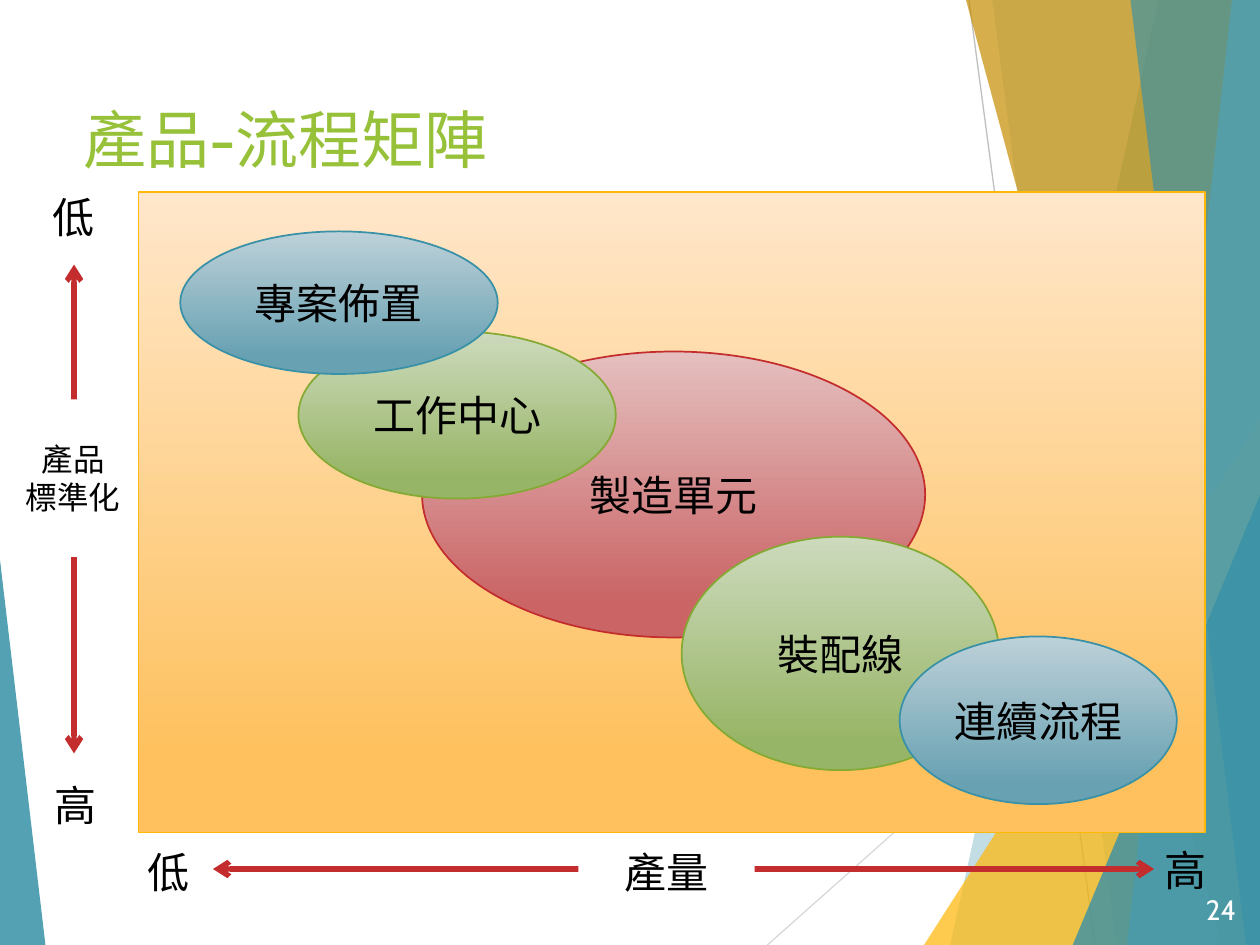
from typing import NamedTuple, Optional

from lxml.etree import SubElement
from pptx import Presentation
from pptx.dml.color import RGBColor
from pptx.enum.shapes import MSO_CONNECTOR as Conn, MSO_SHAPE as Shp
from pptx.enum.text import MSO_ANCHOR as Anchor, PP_ALIGN as Align
from pptx.oxml.ns import qn
from pptx.util import Pt

FONT = "Cabin"
BLACK = RGBColor(0x00, 0x00, 0x00)
WHITE = RGBColor(0xFF, 0xFF, 0xFF)
TITLE_GREEN = RGBColor(0x96, 0xC1, 0x39)
GREY = RGBColor(0xBF, 0xBF, 0xBF)
LIGHT_GREY = RGBColor(0xD9, 0xD9, 0xD9)
TEAL = RGBColor(0x38, 0x91, 0xA7)
LIGHT_TEAL = RGBColor(0x7E, 0xC3, 0xD4)
GOLD = RGBColor(0xFE, 0xB8, 0x0A)
DARK_GOLD = RGBColor(0xC5, 0x8D, 0x01)
RED = RGBColor(0xC3, 0x2D, 0x2E)
GREEN = RGBColor(0x84, 0xAA, 0x33)


class Palette(NamedTuple):
    top: RGBColor
    bottom: RGBColor
    line: RGBColor


ORANGES = Palette(RGBColor(0xFF, 0xE7, 0xCB), RGBColor(0xFE, 0xC1, 0x5E), GOLD)
REDS = Palette(RGBColor(0xE5, 0xBF, 0xBF), RGBColor(0xCA, 0x64, 0x65), RED)
GREENS = Palette(RGBColor(0xCD, 0xDA, 0xBD), RGBColor(0x97, 0xB5, 0x66), GREEN)
BLUES = Palette(RGBColor(0xBD, 0xD1, 0xD9), RGBColor(0x68, 0xA1, 0xB2), TEAL)


class Box(NamedTuple):
    left: float
    top: float
    width: float
    height: float


class Facet(NamedTuple):
    points: list
    color: RGBColor
    opacity: int


class Region(NamedTuple):
    kind: Shp
    box: Box
    palette: Palette
    text: str = ""


class Label(NamedTuple):
    text: str
    box: Box
    size: int = 24
    color: RGBColor = BLACK
    fill: Optional[RGBColor] = None
    align: Align = Align.CENTER
    anchor: Anchor = Anchor.TOP


class Line(NamedTuple):
    start: tuple
    end: tuple
    color: RGBColor
    width: float
    arrows: bool = False


FACETS = [
    Facet([(662, 0), (543, 540), (720, 540), (720, 0)], TEAL, 30),
    Facet([(567, 0), (638, 540), (720, 540), (720, 0)], TEAL, 20),
    Facet([(528, 540), (720, 240), (720, 540)], GOLD, 72),
    Facet([(552, 0), (698, 540), (720, 540), (720, 0)], DARK_GOLD, 70),
    Facet([(704, 0), (644, 540), (720, 540), (720, 0)], LIGHT_TEAL, 70),
    Facet([(646, 0), (712, 540), (720, 540), (720, 0)], TEAL, 65),
    Facet([(613, 540), (720, 283), (720, 540)], TEAL, 80),
    Facet([(0, 320), (26, 540), (0, 540)], TEAL, 85),
]
RULES = [
    Line((438.5, 540), (720, 290), LIGHT_GREY, 0.75),
    Line((553.7, 0), (625.7, 540), GREY, 0.75),
]
REGIONS = [
    Region(Shp.RECTANGLE, Box(79.2, 109.8, 609.4, 366), ORANGES),
    Region(Shp.OVAL, Box(241.2, 200.9, 287.5, 163.4), REDS, "製造單元"),
    Region(Shp.OVAL, Box(170.5, 189.4, 181.4, 95.5), GREENS, "工作中心"),
    Region(Shp.OVAL, Box(103, 132.2, 181.4, 81.5), BLUES, "專案佈置"),
    Region(Shp.OVAL, Box(389.5, 306.7, 181.4, 133.4), GREENS, "裝配線"),
    Region(Shp.OVAL, Box(514.1, 363.7, 158.4, 95.8), BLUES, "連續流程"),
]
AXES = [
    Line((121.7, 496.6), (659.5, 496.6), RED, 3, True),
    Line((42.3, 151.2), (42.3, 430.5), RED, 3, True),
]
LABELS = [
    Label("產量", Box(330.5, 480.2, 100.8, 36), fill=WHITE),
    Label("高", Box(649.4, 478.8, 56.2, 36)),
    Label("低", Box(75.6, 480.2, 41, 36)),
    Label("產品\n標準化", Box(6.5, 228.2, 70.6, 90), 18, fill=WHITE, anchor=Anchor.MIDDLE),
    Label("低", Box(21.6, 105.8, 41, 36)),
    Label("高", Box(15.1, 442.1, 56.2, 36)),
    Label("24", Box(673.2, 505.4, 40.3, 28.8), 16, WHITE,
          align=Align.RIGHT, anchor=Anchor.MIDDLE),
]


def set_attrs(obj, formats: dict) -> None:
    for name, value in formats.items():
        setattr(obj, name, value)


def write(tf, text: str, size: int, color: RGBColor, align: Align, anchor: Anchor) -> None:
    set_attrs(tf, {"word_wrap": True, "vertical_anchor": anchor})
    for i, line in enumerate(text.split("\n")):
        p = tf.paragraphs[0] if i == 0 else tf.add_paragraph()
        p.alignment = align
        r = p.add_run()
        r.text = line
        set_attrs(r.font, {"name": FONT, "size": Pt(size), "bold": False})
        r.font.color.rgb = color
        SubElement(r.font._element, qn("a:ea"), typeface=FONT)


def draw_facet(s, facet: Facet) -> None:
    builder = s.shapes.build_freeform(*facet.points[0], scale=Pt(1))
    builder.add_line_segments(facet.points[1:], close=True)
    sp = builder.convert_to_shape()
    sp.shadow.inherit = False
    sp.line.fill.background()
    sp.fill.solid()
    sp.fill.fore_color.rgb = facet.color
    clr = sp._element.spPr.find(qn("a:solidFill"))[0]
    SubElement(clr, qn("a:alpha"), val=str(facet.opacity * 1000))


def draw_line(s, line: Line) -> None:
    cxn = s.shapes.add_connector(Conn.STRAIGHT, *map(Pt, line.start + line.end))
    cxn.line.color.rgb = line.color
    cxn.line.width = Pt(line.width)
    if line.arrows:
        for tag in ("a:headEnd", "a:tailEnd"):
            SubElement(cxn.line._get_or_add_ln(), qn(tag), type="arrow")
    SubElement(cxn._element.spPr, qn("a:effectLst"))


def draw_region(s, region: Region) -> None:
    sp = s.shapes.add_shape(region.kind, *map(Pt, region.box))
    sp.shadow.inherit = False
    sp.fill.gradient()
    sp.fill.gradient_angle = 270
    colors = (region.palette.top, region.palette.bottom)
    for stop, color, position in zip(sp.fill.gradient_stops, colors, (0, 0.88)):
        stop.color.rgb = color
        stop.position = position
    sp.line.color.rgb = region.palette.line
    sp.line.width = Pt(1)
    if region.text:
        write(sp.text_frame, region.text, 24, BLACK, Align.CENTER, Anchor.MIDDLE)


def draw_label(s, label: Label) -> None:
    sp = s.shapes.add_textbox(*map(Pt, label.box))
    if label.fill is not None:
        sp.fill.solid()
        sp.fill.fore_color.rgb = label.fill
    write(sp.text_frame, label.text, label.size, label.color, label.align, label.anchor)


def place_title(s, text: str, box: Box) -> None:
    sp = s.shapes.title
    set_attrs(sp, dict(zip(Box._fields, map(Pt, box))))
    write(sp.text_frame, text, 36, TITLE_GREEN, Align.LEFT, Anchor.MIDDLE)
    s.shapes._spTree.append(sp._element)


def main() -> None:
    prs = Presentation()
    set_attrs(prs, {"slide_width": Pt(720), "slide_height": Pt(540)})
    s = prs.slides.add_slide(prs.slide_layouts[5])
    for rule in RULES:
        draw_line(s, rule)
    for facet in FACETS:
        draw_facet(s, facet)
    place_title(s, "產品-流程矩陣", Box(40.3, 49.7, 507.6, 59))
    for region in REGIONS:
        draw_region(s, region)
    for axis in AXES:
        draw_line(s, axis)
    for label in LABELS:
        draw_label(s, label)
    prs.save("out.pptx")


if __name__ == "__main__":
    main()
